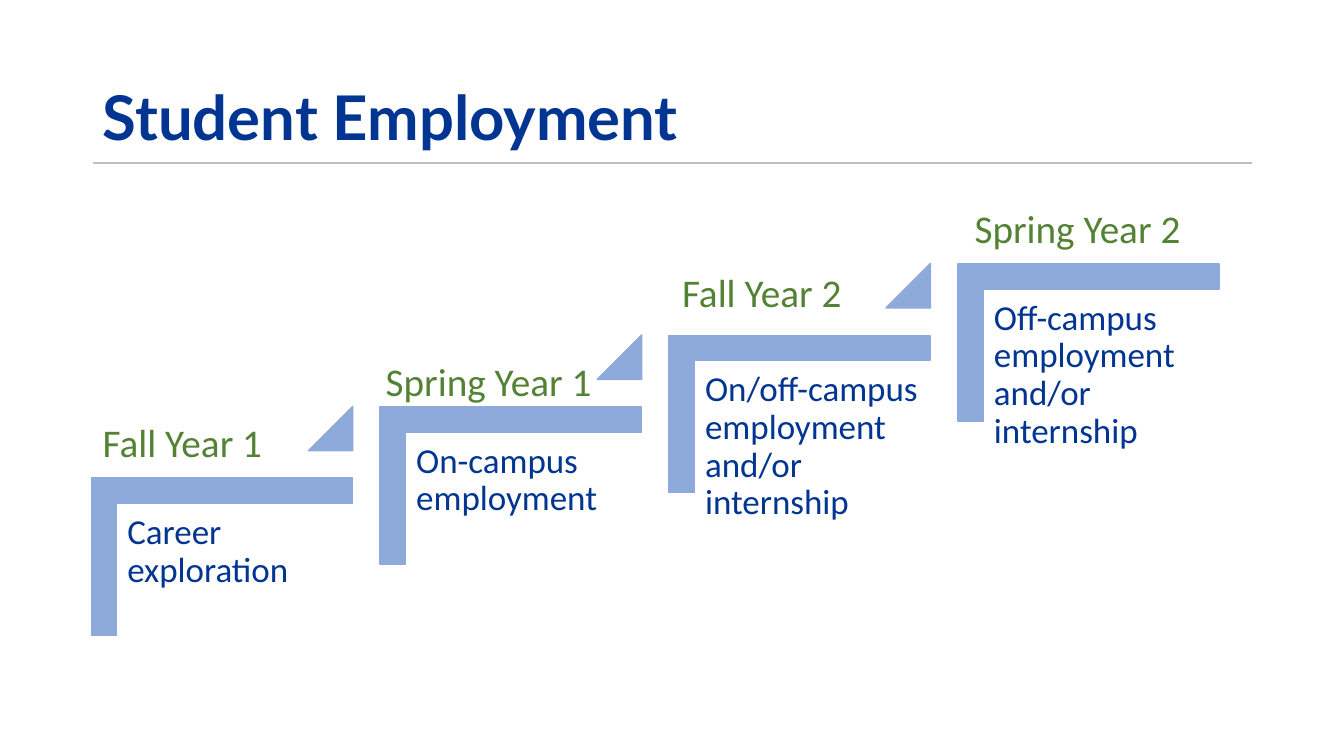
from dataclasses import dataclass

from lxml import etree
from pptx import Presentation
from pptx.dml.color import RGBColor
from pptx.enum.shapes import MSO_CONNECTOR, MSO_SHAPE
from pptx.enum.text import MSO_ANCHOR, MSO_AUTO_SIZE, PP_ALIGN
from pptx.oxml.ns import qn
from pptx.util import Cm, Pt

CORNER, TRIANGLE = MSO_SHAPE.CORNER, MSO_SHAPE.ISOSCELES_TRIANGLE
STRAIGHT = MSO_CONNECTOR.STRAIGHT
LEFT, TOP, BOTTOM = PP_ALIGN.LEFT, MSO_ANCHOR.TOP, MSO_ANCHOR.BOTTOM
NO_FIT, GROW = MSO_AUTO_SIZE.NONE, MSO_AUTO_SIZE.SHAPE_TO_FIT_TEXT
TITLE_ONLY = 5


@dataclass(frozen=True)
class Theme:
    navy: RGBColor = RGBColor(0x01, 0x35, 0x91)
    green: RGBColor = RGBColor(0x54, 0x82, 0x35)
    step_blue: RGBColor = RGBColor(0x8E, 0xAA, 0xDB)
    rule_grey: RGBColor = RGBColor(0xBF, 0xBF, 0xBF)
    title_font: str = "Lato"
    body_font: str = "Calibri"
    title_size: Pt = Pt(44)
    term_size: Pt = Pt(28)
    step_size: Pt = Pt(25)
    line_width: Pt = Pt(1)


THEME = Theme()

# Each step moves right and up by the same amount
STEP_RIGHT, STEP_UP = 7.28, 1.8

# Term, left and top of its label, label width, activity
STEPS = [
    ("Fall Year 1", 2.34, 10.41, 4.57, "Career exploration"),
    ("Spring Year 1", 9.47, 8.89, 5.77, "On-campus employment"),
    ("Fall Year 2", 16.94, 6.63, 4.57,
     "On/off-campus employment and/or internship"),
    ("Spring Year 2", 24.31, 5.03, 5.77,
     "Off-campus employment and/or internship"),
]


def write(frame, text, font_name, size, color, bold=False):
    paragraph = frame.paragraphs[0]
    paragraph.text = text
    paragraph.alignment = LEFT
    font = paragraph.font
    font.name, font.size, font.bold = font_name, size, bold
    font.color.rgb = color
    return paragraph


def add_title(slide, text):
    title = slide.shapes.title
    title.left, title.top = Cm(2.34), Cm(1.6)
    title.width, title.height = Cm(29.26), Cm(2.41)
    frame = title.text_frame
    frame.auto_size, frame.vertical_anchor = NO_FIT, BOTTOM
    paragraph = write(frame, text, THEME.title_font, THEME.title_size,
                      THEME.navy, bold=True)
    paragraph.line_spacing = 0.9


def add_rule(slide):
    rule = slide.shapes.add_connector(STRAIGHT, Cm(2.34), Cm(4.11),
                                      Cm(31.55), Cm(4.11))
    rule.line.color.rgb = THEME.rule_grey
    rule.line.width = THEME.line_width
    etree.SubElement(rule._element.spPr, qn("a:effectLst"))


def add_step_shape(slide, kind, left, top, width, height, adjustments):
    shape = slide.shapes.add_shape(kind, Cm(left), Cm(top),
                                   Cm(width), Cm(height))
    for index, value in enumerate(adjustments):
        shape.adjustments[index] = value
    shape.shadow.inherit = False
    shape.fill.solid()
    shape.fill.fore_color.rgb = THEME.step_blue
    shape.line.color.rgb = THEME.step_blue
    shape.line.width = THEME.line_width
    return shape


def add_activity(slide, text, left, top):
    box = slide.shapes.add_textbox(Cm(left), Cm(top), Cm(5.94), Cm(5.21))
    frame = box.text_frame
    frame.word_wrap, frame.vertical_anchor = True, TOP
    frame.margin_left = frame.margin_right = Cm(0.26)
    frame.margin_top = frame.margin_bottom = Cm(0.26)
    paragraph = write(frame, text, THEME.body_font, THEME.step_size,
                      THEME.navy)
    paragraph.line_spacing = 0.9


def add_term(slide, text, left, top, width):
    label = slide.shapes.add_textbox(Cm(left), Cm(top), Cm(width), Cm(1.45))
    frame = label.text_frame
    frame.word_wrap, frame.auto_size = False, GROW
    write(frame, text, THEME.body_font, THEME.term_size, THEME.green)


def main():
    deck = Presentation()
    deck.slide_width, deck.slide_height = Cm(33.87), Cm(19.05)
    slide = deck.slides.add_slide(deck.slide_layouts[TITLE_ONLY])

    # Heading
    add_rule(slide)
    add_title(slide, "Student Employment")

    # Staircase, with a triangle leading up to each next step
    for index, (*_, activity) in enumerate(STEPS):
        right, up = index * STEP_RIGHT, index * STEP_UP
        corner = add_step_shape(slide, CORNER, 3.61 + right, 10.74 - up,
                                3.96, 6.58, [0.161, 0.161])
        corner.rotation = 90
        add_activity(slide, activity, 2.95 + right, 12.7 - up)
        if index < len(STEPS) - 1:
            add_step_shape(slide, TRIANGLE, 7.77 + right, 10.24 - up,
                           1.12, 1.12, [1])

    # Terms above the steps
    for term, left, top, width, _ in STEPS:
        add_term(slide, term, left, top, width)

    deck.save("out.pptx")


if __name__ == "__main__":
    main()
